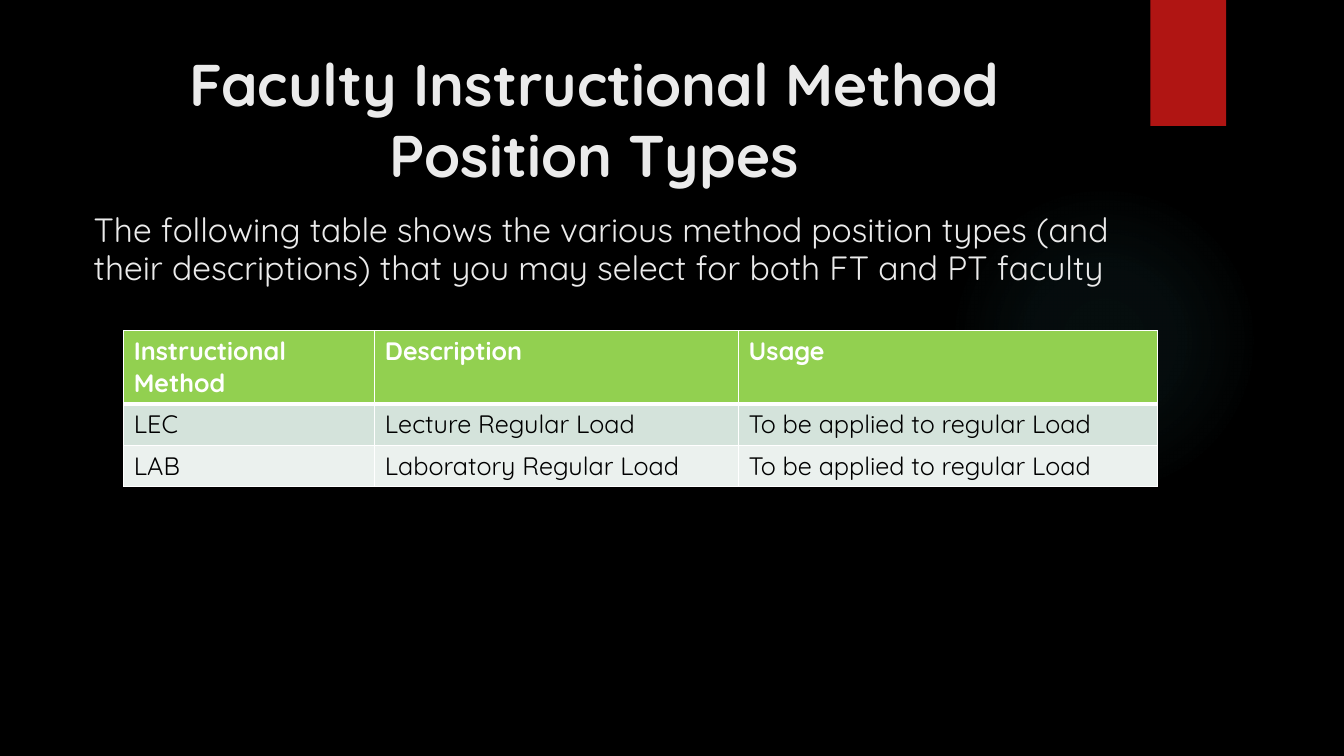
from dataclasses import dataclass

from lxml import etree
from pptx import Presentation
from pptx.dml.color import RGBColor
from pptx.enum.shapes import MSO_SHAPE
from pptx.enum.text import MSO_ANCHOR, PP_ALIGN
from pptx.oxml import parse_xml
from pptx.oxml.ns import nsdecls, qn
from pptx.util import Pt

RECT, OVAL = MSO_SHAPE.RECTANGLE, MSO_SHAPE.OVAL
LEFT, CENTER = PP_ALIGN.LEFT, PP_ALIGN.CENTER
TOP, MIDDLE = MSO_ANCHOR.TOP, MSO_ANCHOR.MIDDLE

FONT = "Quicksand"
COLORS = {
    "background": "000000",
    "glow": "50B9C1",
    "ribbon": "B01513",
    "light": "EBEBEB",
    "white": "FFFFFF",
    "black": "000000",
    "header": "92D050",
    "band_dark": "D4E3DB",
    "band_light": "EBF1EE",
}


@dataclass
class Box:
    left: float
    top: float
    width: float
    height: float

    def emu(self) -> tuple:
        return Pt(self.left), Pt(self.top), Pt(self.width), Pt(self.height)


@dataclass
class TextBlock:
    box: Box
    lines: list[str]
    size: float
    bold: bool
    align: int
    anchor: int
    spacing: float


@dataclass
class Row:
    cells: list[str]
    height: float
    fill: str
    color: str
    bold: bool
    top_line: float
    bottom_line: float


TEXTS = [
    TextBlock(Box(33.1, 29.5, 782.6, 110.2),
              ["Faculty Instructional Method", "Position Types"],
              42, True, CENTER, MIDDLE, 1.0),
    TextBlock(Box(59.8, 147.6, 774, 58.3),
              ["The following table shows the various method position types (and "
               "their descriptions) that you may select for both FT and PT faculty"],
              24, False, LEFT, TOP, 0.95),
]

TABLE_BOX = Box(88.4, 236.2, 738.7, 111.6)
COLUMN_WIDTHS = [179.3, 259.9, 299.5]
ROWS = [
    Row(["Instructional Method", "Description", "Usage"],
        52.2, "header", "white", True, 1, 3),
    Row(["LEC", "Lecture Regular Load", "To be applied to regular Load"],
        29.7, "band_dark", "black", False, 3, 1),
    Row(["LAB", "Laboratory Regular Load", "To be applied to regular Load"],
        29.7, "band_light", "black", False, 1, 1),
]


def rgb(name: str) -> RGBColor:
    return RGBColor.from_string(COLORS[name])


def add_run(p, text: str, size: float, color: str, bold: bool) -> None:
    r = p.add_run()
    r.text = text
    r.font.name = FONT
    r.font.size = Pt(size)
    r.font.bold = bold
    r.font.color.rgb = rgb(color)


def add_plain_shape(s, kind: int, box: Box, color: str):
    sp = s.shapes.add_shape(kind, *box.emu())
    sp.shadow.inherit = False
    sp.fill.solid()
    sp.fill.fore_color.rgb = rgb(color)
    sp.line.fill.background()
    return sp


def add_glow(s, box: Box) -> None:
    sp = add_plain_shape(s, OVAL, box, "glow")
    stops = "".join(
        f'<a:gs pos="{pos * 1000}"><a:srgbClr val="{COLORS["glow"]}">'
        f'<a:alpha val="{alpha * 1000}"/></a:srgbClr></a:gs>'
        for pos, alpha in [(0, 7), (36, 6), (69, 0), (100, 0)])
    gradient = parse_xml(
        f'<a:gradFill {nsdecls("a")}><a:gsLst>{stops}</a:gsLst><a:path path="circle">'
        '<a:fillToRect l="50000" t="50000" r="50000" b="50000"/></a:path></a:gradFill>')
    props = sp.element.spPr
    props.replace(props.find(qn("a:solidFill")), gradient)


def add_text(s, block: TextBlock) -> None:
    tf = s.shapes.add_textbox(*block.box.emu()).text_frame
    tf.word_wrap = True
    tf.vertical_anchor = block.anchor
    p = tf.paragraphs[0]
    p.alignment = block.align
    p.line_spacing = block.spacing
    for i, line in enumerate(block.lines):
        if i:
            p.add_line_break()
        add_run(p, line, block.size, "light", block.bold)


def add_borders(cell, top: float, bottom: float) -> None:
    props = cell._tc.get_or_add_tcPr()
    for side, width in [("L", 1), ("R", 1), ("T", top), ("B", bottom)]:
        ln = etree.SubElement(props, qn(f"a:ln{side}"), w=str(Pt(width)))
        fill = etree.SubElement(ln, qn("a:solidFill"))
        etree.SubElement(fill, qn("a:srgbClr"), val=COLORS["white"])


def add_method_table(s) -> None:
    table = s.shapes.add_table(len(ROWS), len(COLUMN_WIDTHS), *TABLE_BOX.emu()).table
    for column, width in zip(table.columns, COLUMN_WIDTHS):
        column.width = Pt(width)
    for i, row in enumerate(ROWS):
        table.rows[i].height = Pt(row.height)
        for j, text in enumerate(row.cells):
            cell = table.cell(i, j)
            add_borders(cell, row.top_line, row.bottom_line)
            cell.fill.solid()
            cell.fill.fore_color.rgb = rgb(row.fill)
            add_run(cell.text_frame.paragraphs[0], text, 18, row.color, row.bold)


def main() -> None:
    prs = Presentation()
    prs.slide_width, prs.slide_height = Pt(960), Pt(540)
    s = prs.slides.add_slide(prs.slide_layouts[6])

    # Background and decoration
    s.background.fill.solid()
    s.background.fill.fore_color.rgb = rgb("background")
    add_glow(s, Box(677.5, 131.8, 221.8, 221.8))
    add_plain_shape(s, RECT, Box(821.8, 0, 54, 90), "ribbon")

    # Title and introduction
    for block in TEXTS:
        add_text(s, block)

    # Position types
    add_method_table(s)

    prs.save("out.pptx")


if __name__ == "__main__":
    main()
